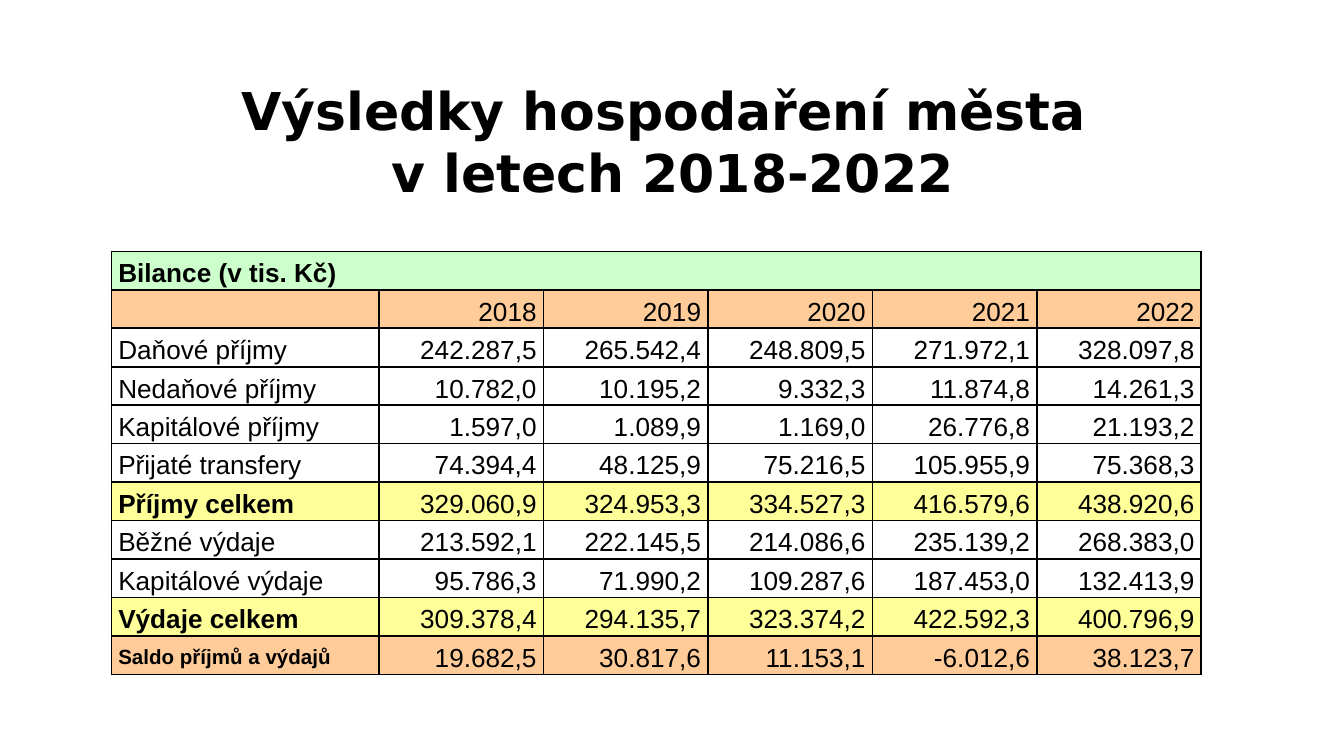
from lxml import etree
from pptx import Presentation
from pptx import util as u
from pptx.dml import color
from pptx.enum import text
from pptx.oxml import ns

GREEN, PEACH, WHITE, YELLOW = "CCFFCC", "FFCC99", "FFFFFF", "FFFF99"
ROWS = [
    (GREEN, "Bilance (v tis. Kč)", ""),
    (PEACH, "", "2018 2019 2020 2021 2022"),
    (WHITE, "Daňové příjmy", "242.287,5 265.542,4 248.809,5 271.972,1 328.097,8"),
    (WHITE, "Nedaňové příjmy", "10.782,0 10.195,2 9.332,3 11.874,8 14.261,3"),
    (WHITE, "Kapitálové příjmy", "1.597,0 1.089,9 1.169,0 26.776,8 21.193,2"),
    (WHITE, "Přijaté transfery", "74.394,4 48.125,9 75.216,5 105.955,9 75.368,3"),
    (YELLOW, "Příjmy celkem", "329.060,9 324.953,3 334.527,3 416.579,6 438.920,6"),
    (WHITE, "Běžné výdaje", "213.592,1 222.145,5 214.086,6 235.139,2 268.383,0"),
    (WHITE, "Kapitálové výdaje", "95.786,3 71.990,2 109.287,6 187.453,0 132.413,9"),
    (YELLOW, "Výdaje celkem", "309.378,4 294.135,7 323.374,2 422.592,3 400.796,9"),
    (PEACH, "Saldo příjmů a výdajů", "19.682,5 30.817,6 11.153,1 -6.012,6 38.123,7"),
]


def rgb(code):
    """Turn a hex string into a colour."""
    return color.RGBColor.from_string(code)


def style(para, face, size, bold):
    """Format every run of a paragraph."""
    for run in para.runs:
        font = run.font
        font.name, font.size, font.bold = face, u.Pt(size), bold
        font.color.rgb = rgb("000000")


def edge(cell):
    """Draw a thin black line on all four sides of a cell."""
    props = cell._tc.get_or_add_tcPr()
    for side in ("lnL", "lnR", "lnT", "lnB"):
        line = etree.SubElement(props, ns.qn("a:" + side), w=str(u.Pt(1)))
        fill = etree.SubElement(line, ns.qn("a:solidFill"))
        etree.SubElement(fill, ns.qn("a:srgbClr"), val="000000")


def fill_cell(cell, words, back, size, bold, align):
    """Write and format one table cell."""
    edge(cell)
    cell.fill.solid()
    cell.fill.fore_color.rgb = rgb(back)
    cell.margin_left = cell.margin_right = u.Inches(0.05)
    cell.margin_top = cell.margin_bottom = 0
    cell.vertical_anchor = text.MSO_ANCHOR.MIDDLE
    para = cell.text_frame.paragraphs[0]
    para.text = words
    para.alignment = align
    para.line_spacing = 1.2
    style(para, "Arial", size, bold)
    if not words:
        para._p.get_or_add_endParaRPr().set("sz", str(size * 100))


def add_title(slide, x, y, w, h):
    """Place the two-line slide title."""
    title = slide.shapes.title
    title.left, title.top, title.width, title.height = map(u.Inches, (x, y, w, h))
    frame = title.text_frame
    frame.text = "Výsledky hospodaření města \vv letech 2018-2022"
    frame.auto_size = text.MSO_AUTO_SIZE.NONE
    frame.vertical_anchor = text.MSO_ANCHOR.MIDDLE
    para = frame.paragraphs[0]
    para.alignment = text.PP_ALIGN.CENTER
    style(para, "DejaVu Sans", 27.9, True)


def add_budget(slide, x, y, w, h):
    """Place the table of income and spending by year."""
    years, first = 5, 1.99
    table = slide.shapes.add_table(
        len(ROWS), years + 1, *map(u.Inches, (x, y, w, h))).table
    table.first_row = table.horz_banding = False
    for i, col in enumerate(table.columns):
        col.width = u.Inches((w - first) / years if i else first)
    for r, (back, label, values) in enumerate(ROWS):
        table.rows[r].height = u.Inches(h / len(ROWS))
        words = [label] + (values.split() or [""] * years)
        for c, word in enumerate(words):
            size = 11 if c == 0 and r == len(ROWS) - 1 else 14
            bold = c == 0 and back != WHITE
            align = text.PP_ALIGN.RIGHT if c else text.PP_ALIGN.LEFT
            fill_cell(table.cell(r, c), word, back, size, bold, align)
    table.cell(0, 0).merge(table.cell(0, years))


def main():
    """Build and save the slide."""
    deck = Presentation()
    deck.slide_width = u.Inches(10)
    deck.slide_height = u.Inches(10 * 9 / 16)
    slide = deck.slides.add_slide(deck.slide_layouts[5])
    add_title(slide, 0.51, 0.61, 8.99, 0.87)
    add_budget(slide, 0.83, 1.87, 8.11, 3.15)
    deck.save("out.pptx")


if __name__ == "__main__":
    main()
